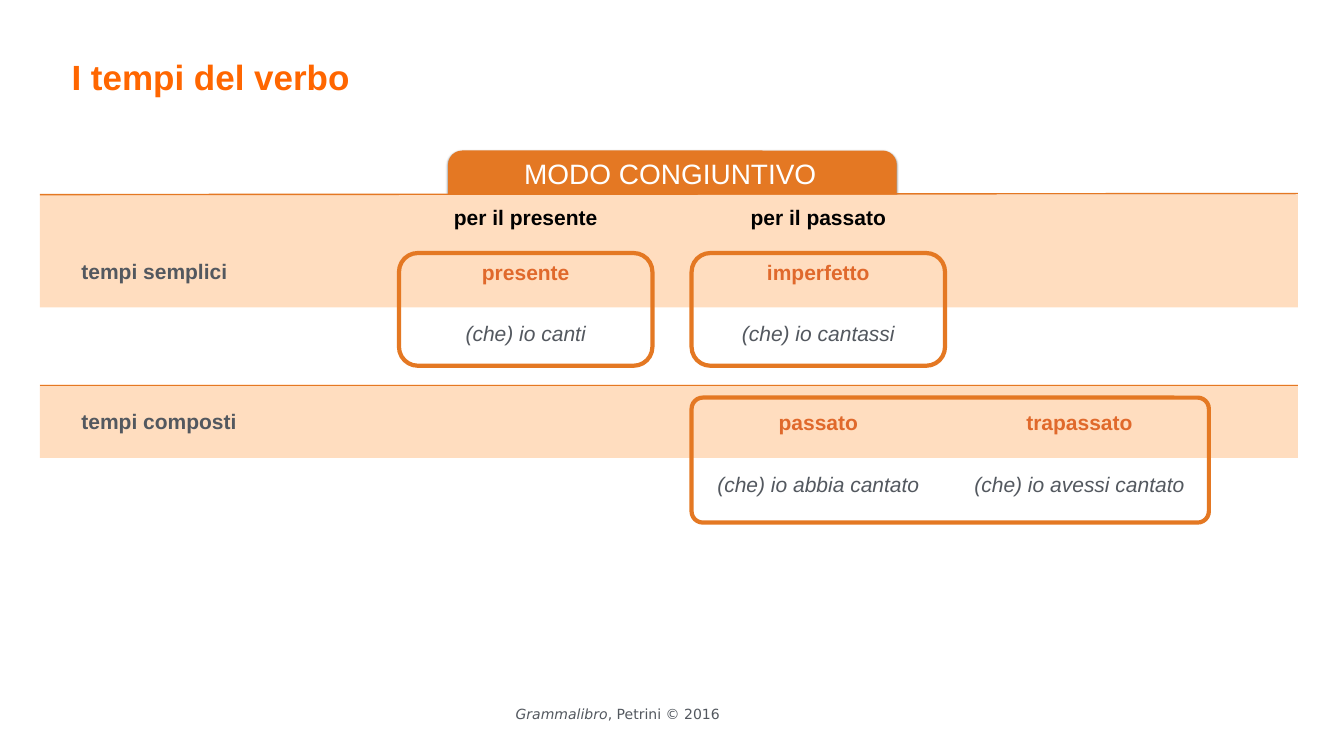
from pptx import Presentation
from pptx.dml.color import RGBColor
from pptx.enum.shapes import MSO_CONNECTOR as Link, MSO_SHAPE as Shape
from pptx.enum.text import MSO_ANCHOR as Anchor, PP_ALIGN as Align
from pptx.oxml import parse_xml
from pptx.oxml.ns import nsdecls, qn
from pptx.util import Pt

ORANGE = RGBColor(0xE4, 0x78, 0x23)
PEACH = RGBColor(0xFF, 0xDD, 0xBF)
RUST = RGBColor(0xE0, 0x69, 0x2C)
BRIGHT = RGBColor(0xFF, 0x66, 0x00)
GREY = RGBColor(0x53, 0x58, 0x5F)
BLACK = RGBColor(0, 0, 0)
WHITE = RGBColor(0xFF, 0xFF, 0xFF)

LEFT, RIGHT = 57, 1854
COLS = (570, 988, 1361)
COL_W = 362
LABEL_H = 50


def add_run(para, text, size=30, color=GREY, bold=False, italic=False, face="Arial"):
    run = para.add_run()
    run.text = text
    font = run.font
    font.name, font.size = face, Pt(size)
    font.bold, font.italic = bold, italic
    font.color.rgb = color


def add_text(slide, box, *paras, align=Align.LEFT, lines=1.2, gap=0,
             pad=(4.3, 4.3), anchor=Anchor.MIDDLE, wrap=True):
    """Each paragraph is a list of (text, run format) pairs."""
    frame = slide.shapes.add_textbox(*map(Pt, box)).text_frame
    frame.word_wrap = wrap
    frame.vertical_anchor = anchor
    frame.margin_left = frame.margin_right = Pt(pad[0])
    frame.margin_top = frame.margin_bottom = Pt(pad[1])
    for i, runs in enumerate(paras):
        para = frame.add_paragraph() if i else frame.paragraphs[0]
        para.alignment, para.line_spacing = align, lines
        if i:
            para.space_before = Pt(gap)
        for text, style in runs:
            add_run(para, text, **style)


def add_box(slide, kind, box, fill=None, line=None, adj=None):
    shape = slide.shapes.add_shape(kind, *map(Pt, box))
    shape.shadow.inherit = False
    if adj:
        shape.adjustments[0] = adj
    if fill:
        shape.fill.solid()
        shape.fill.fore_color.rgb = fill
    else:
        shape.fill.background()
    if line:
        shape.line.color.rgb = line
        shape.line.width = Pt(6)
    else:
        shape.line.fill.background()
    return shape


def add_shadow(shape):
    effects = shape._element.spPr.find(qn("a:effectLst"))
    effects.append(parse_xml(
        f'<a:outerShdw {nsdecls("a")} blurRad="{Pt(3)}" dist="{Pt(2)}" dir="5400000" '
        'rotWithShape="0"><a:srgbClr val="000000"><a:alpha val="50000"/>'
        '</a:srgbClr></a:outerShdw>'))


def add_rule(slide, start, end):
    rule = slide.shapes.add_connector(
        Link.STRAIGHT, Pt(LEFT), Pt(start), Pt(RIGHT), Pt(end))
    rule.line.color.rgb = ORANGE
    rule.line.width = Pt(2)
    rule._element.spPr.append(parse_xml(f'<a:effectLst {nsdecls("a")}/>'))


def add_band(slide, top, height, start, end):
    add_box(slide, Shape.RECTANGLE, (LEFT, top, RIGHT - LEFT, height), fill=PEACH)
    add_rule(slide, start, end)


def add_tense(slide, left, top, name, sample):
    add_text(slide, (left, top, COL_W, 137.5),
             [(name, dict(color=RUST, bold=True))],
             [(sample, dict(italic=True))],
             align=Align.CENTER, gap=45)


def add_frame(slide, box, adj=None):
    add_box(slide, Shape.ROUNDED_RECTANGLE, box, line=ORANGE, adj=adj)


def main():
    deck = Presentation()
    deck.slide_width, deck.slide_height = Pt(1920), Pt(1080)
    slide = deck.slides.add_slide(deck.slide_layouts[6])

    add_text(slide, (727, 1010, 311, 26),
             [("Grammalibro", dict(size=20, italic=True, face="DejaVu Sans")),
              (", Petrini © 2016", dict(size=20, face="DejaVu Sans"))],
             align=Align.CENTER, lines=0.7, wrap=False)
    add_text(slide, (98, 70, 739, 73),
             [("I tempi del verbo", dict(size=50, color=BRIGHT, bold=True))], lines=1.1)

    tab = add_box(slide, Shape.ROUNDED_RECTANGLE, (640, 215, 641, 204),
                  fill=ORANGE, adj=0.1)
    add_shadow(tab)
    add_band(slide, 278, 161, 278, 276.5)
    add_band(slide, 549, 105, 551, 551)
    add_text(slide, (675, 215, 565, 60),
             [("MODO CONGIUNTIVO", dict(size=40, color=WHITE))],
             align=Align.CENTER, lines=1.1, pad=(7.2, 3.6), anchor=Anchor.TOP)

    for top, label in ((359, "tempi semplici"), (573, "tempi composti")):
        add_text(slide, (112, top, 342, LABEL_H), [(label, dict(bold=True))])
    for left, label in zip(COLS, ("per il presente", "per il passato")):
        add_text(slide, (left, 281, COL_W, LABEL_H),
                 [(label, dict(color=BLACK, bold=True))], align=Align.CENTER)

    for col, top, name, sample in (
            (0, 360, "presente", "(che) io canti"),
            (1, 360, "imperfetto", "(che) io cantassi"),
            (1, 575, "passato", "(che) io abbia cantato"),
            (2, 575, "trapassato", "(che) io avessi cantato")):
        add_tense(slide, COLS[col], top, name, sample)

    for left in COLS[:2]:
        add_frame(slide, (left, 361.5, COL_W, 161))
    add_frame(slide, (COLS[1], 568, 739, 178.5), adj=0.09)

    deck.save("out.pptx")


if __name__ == "__main__":
    main()
